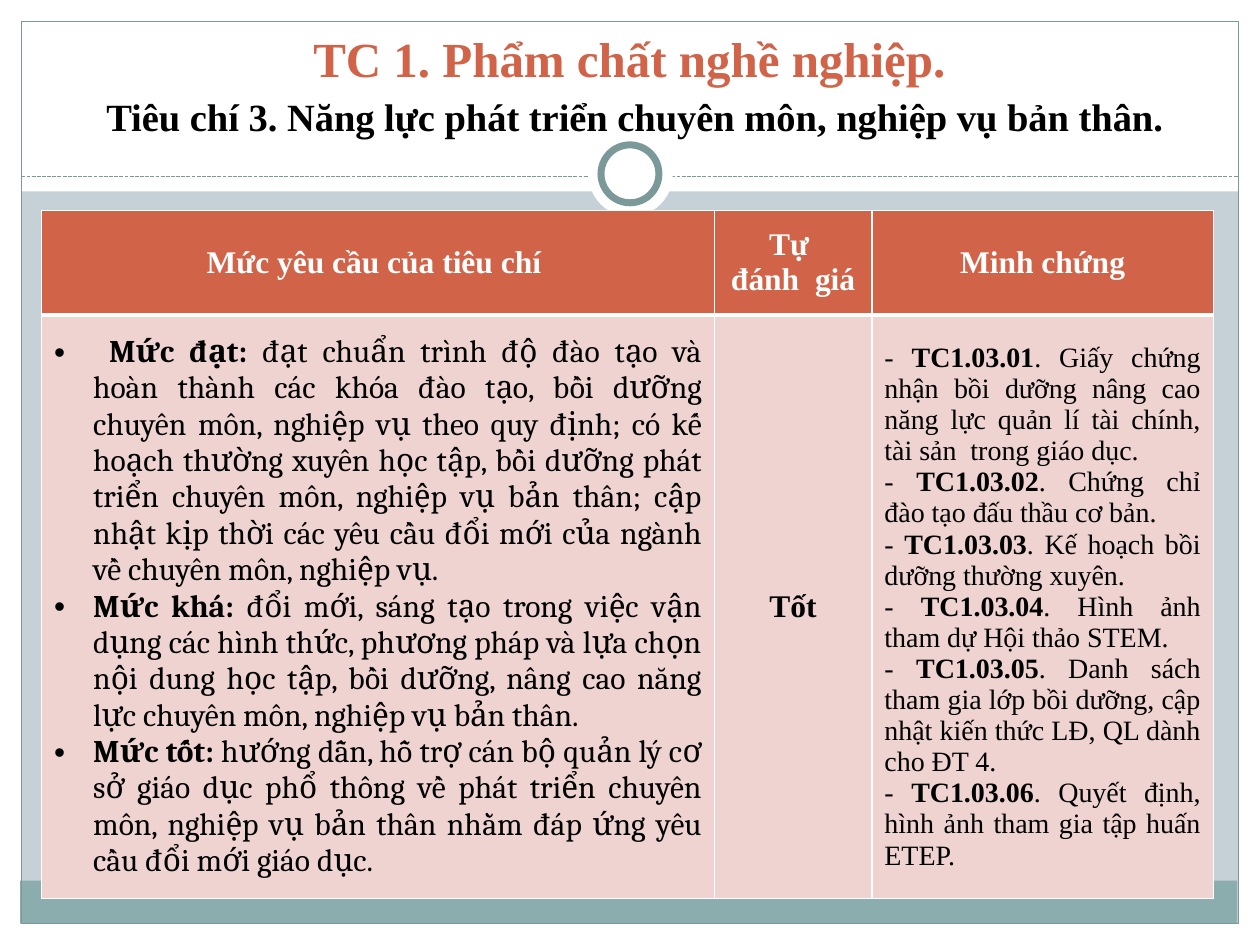
from dataclasses import dataclass
from typing import Optional

from lxml.etree import SubElement
from pptx import Presentation
from pptx.dml.color import RGBColor
from pptx.enum.dml import MSO_LINE
from pptx.enum.shapes import MSO_CONNECTOR, MSO_SHAPE
from pptx.enum.text import MSO_ANCHOR, PP_ALIGN
from pptx.oxml.ns import qn
from pptx.util import Emu, Pt

PX = 9144
WHITE, BLACK, TEAL, RUST, PINK = "FFFFFF", "000000", "7C999A", "D16349", "EED3D0"
SERIF, BODY = "Times New Roman", "Cambria"


@dataclass
class Box:
    x: int
    y: int
    w: int
    h: int
    fill: Optional[str] = WHITE
    line: Optional[str] = None
    weight: float = 0.75
    kind: MSO_SHAPE = MSO_SHAPE.RECTANGLE


@dataclass
class Run:
    text: str
    size: int = 18
    color: str = BLACK
    bold: bool = False
    font: str = SERIF


def px(n: int) -> Emu:
    """Turn px, 100 to the inch, into EMU."""
    return Emu(n * PX)


def rgb(color: str) -> RGBColor:
    """Turn a hex string into a colour."""
    return RGBColor.from_string(color)


def draw_box(slide, box: Box) -> None:
    """Draw one frame or decoration shape."""
    sp = slide.shapes.add_shape(box.kind, px(box.x), px(box.y), px(box.w), px(box.h))
    sp.shadow.inherit = False
    if box.fill:
        sp.fill.solid()
        sp.fill.fore_color.rgb = rgb(box.fill)
    else:
        sp.fill.background()
    if box.line:
        sp.line.color.rgb = rgb(box.line)
        sp.line.width = Pt(box.weight)
    else:
        sp.line.fill.background()


def draw_divider(slide, x1: int, x2: int, y: int) -> None:
    """Draw the dashed rule below the title."""
    s = slide.shapes.add_connector(MSO_CONNECTOR.STRAIGHT, px(x1), px(y), px(x2), px(y))
    s.line.color.rgb = rgb(TEAL)
    s.line.width = Pt(0.75)
    s.line.dash_style = MSO_LINE.SQUARE_DOT
    SubElement(s._element.spPr, qn("a:effectLst"))


def add_runs(p, runs: list[Run], align: PP_ALIGN) -> None:
    """Add formatted runs to a paragraph."""
    p.alignment = align
    for run in runs:
        r = p.add_run()
        r.text = run.text
        r.font.name = run.font
        r.font.size = Pt(run.size)
        r.font.bold = run.bold
        r.font.color.rgb = rgb(run.color)


def add_bullet(p, indent: int) -> None:
    """Give a paragraph a hanging round bullet."""
    pPr = p._p.get_or_add_pPr()
    pPr.set("marL", str(px(indent)))
    pPr.set("indent", str(-px(indent)))
    SubElement(pPr, qn("a:buFont"), typeface="Arial")
    SubElement(pPr, qn("a:buChar"), char="•")


def fill_cell(cell, paragraphs: list[list[Run]], fill: str, bottom: int,
              align: PP_ALIGN = PP_ALIGN.CENTER, bullets: bool = False) -> None:
    """Set the borders, fill and text of a table cell."""
    tcPr = cell._tc.get_or_add_tcPr()
    for side, weight in (("L", 1), ("R", 1), ("T", 1), ("B", bottom)):
        ln = SubElement(tcPr, qn(f"a:ln{side}"), w=str(Pt(weight)))
        SubElement(SubElement(ln, qn("a:solidFill")), qn("a:srgbClr"), val=WHITE)
    cell.fill.solid()
    cell.fill.fore_color.rgb = rgb(fill)
    cell.vertical_anchor = MSO_ANCHOR.MIDDLE
    tf = cell.text_frame
    for i, runs in enumerate(paragraphs):
        p = tf.add_paragraph() if i else tf.paragraphs[0]
        add_runs(p, runs, align)
        if bullets:
            add_bullet(p, 31)


def draw_title(slide) -> None:
    """Draw the two-line title."""
    tb = slide.shapes.add_textbox(px(33), px(8), px(933), px(108))
    tf = tb.text_frame
    tf.word_wrap = True
    tf.vertical_anchor = MSO_ANCHOR.BOTTOM
    p = tf.paragraphs[0]
    add_runs(p, [Run("TC 1. Phẩm chất nghề nghiệp.", 28, RUST, True)], PP_ALIGN.CENTER)
    p.add_line_break()
    add_runs(p, [Run(" ", 25, RUST, True), Run(SUBTITLE, 22, BLACK, True)], PP_ALIGN.CENTER)


def draw_table(slide) -> None:
    """Draw the criteria table."""
    frame = slide.shapes.add_table(2, 3, px(33), px(167), px(930), px(524))
    table = frame.table
    table.horz_banding = False
    for col, width in zip(table.columns, (534, 125, 271)):
        col.width = px(width)
    for row, height in zip(table.rows, (83, 441)):
        row.height = px(height)
    for i, lines in enumerate(HEADERS):
        fill_cell(table.cell(0, i), [[Run(t, 18, WHITE, True)] for t in lines], RUST, 3)
    levels = [[Run(name, bold=True, font=BODY), Run(text, font=BODY)] for name, text in LEVELS]
    levels[0].insert(0, Run(" ", bold=True))
    evidence = [[Run("- ", 16), Run(f"TC1.03.{n:02}", 16, bold=True), Run(f". {text}", 16)]
                for n, text in enumerate(EVIDENCE, 1)]
    fill_cell(table.cell(1, 0), levels, PINK, 1, PP_ALIGN.JUSTIFY, True)
    fill_cell(table.cell(1, 1), [[Run("Tốt", bold=True)]], PINK, 1)
    fill_cell(table.cell(1, 2), evidence, PINK, 1, PP_ALIGN.JUSTIFY)


SUBTITLE = "Tiêu chí 3. Năng lực phát triển chuyên môn, nghiệp vụ bản thân."
HEADERS = [["Mức yêu cầu của tiêu chí "], ["Tự ", "đánh  giá"], ["Minh chứng"]]
LEVELS = [
    ("Mức đạt: ", "đạt chuẩn trình độ đào tạo và hoàn thành các khóa đào tạo, bồi dưỡng "
     "chuyên môn, nghiệp vụ theo quy định; có kế hoạch thường xuyên học tập, bồi dưỡng "
     "phát triển chuyên môn, nghiệp vụ bản thân; cập nhật kịp thời các yêu cầu đổi mới "
     "của ngành về chuyên môn, nghiệp vụ."),
    ("Mức khá: ", "đổi mới, sáng tạo trong việc vận dụng các hình thức, phương pháp và "
     "lựa chọn nội dung học tập, bồi dưỡng, nâng cao năng lực chuyên môn, nghiệp vụ "
     "bản thân."),
    ("Mức tốt: ", "hướng dẫn, hỗ trợ cán bộ quản lý cơ sở giáo dục phổ thông về phát "
     "triển chuyên môn, nghiệp vụ bản thân nhằm đáp ứng yêu cầu đổi mới giáo dục."),
]
EVIDENCE = [
    "Giấy chứng nhận bồi dưỡng nâng cao năng lực quản lí tài chính, tài sản  trong giáo dục.",
    "Chứng chỉ đào tạo đấu thầu cơ bản.",
    "Kế hoạch bồi dưỡng thường xuyên.",
    "Hình ảnh tham dự Hội thảo STEM.",
    "Danh sách tham gia lớp bồi dưỡng, cập nhật kiến thức LĐ, QL dành cho ĐT 4.",
    "Quyết định, hình ảnh tham gia tập huấn ETEP.",
]
FRAME = [
    Box(0, 733, 1000, 17),
    Box(0, 0, 1000, 152),
    Box(0, 0, 17, 750),
    Box(983, 0, 17, 750),
    Box(16, 699, 966, 34, "8CADAE"),
    Box(17, 17, 966, 716, None, TEAL),
]
RING = [
    Box(467, 105, 67, 67, kind=MSO_SHAPE.OVAL),
    Box(477, 115, 46, 46, WHITE, TEAL, 4, MSO_SHAPE.OVAL),
]


def main() -> None:
    """Build and save the slide."""
    prs = Presentation()
    prs.slide_width, prs.slide_height = px(1000), px(750)
    slide = prs.slides.add_slide(prs.slide_layouts[6])
    slide.background.fill.solid()
    slide.background.fill.fore_color.rgb = rgb("C5D1D7")
    for box in FRAME:
        draw_box(slide, box)
    draw_divider(slide, 17, 983, 140)
    for box in RING:
        draw_box(slide, box)
    draw_title(slide)
    draw_table(slide)
    prs.save("out.pptx")


if __name__ == "__main__":
    main()
